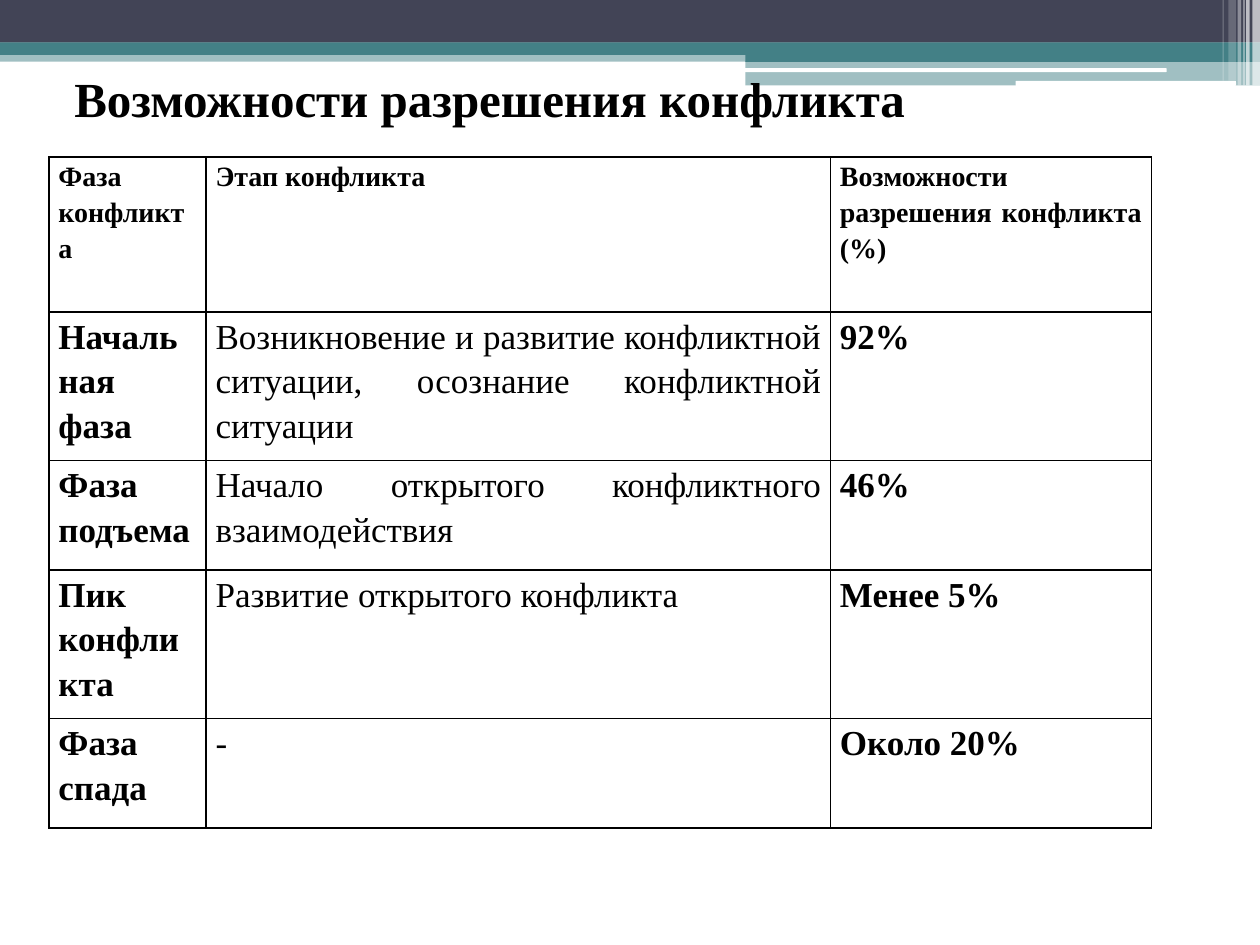
"""Builds a slide with a table of conflict phases and the chances of resolving them."""
from lxml.etree import SubElement
from pptx import Presentation
from pptx.dml.color import RGBColor
from pptx.enum.shapes import MSO_SHAPE
from pptx.enum.text import MSO_ANCHOR, MSO_AUTO_SIZE, PP_ALIGN
from pptx.oxml import parse_xml
from pptx.oxml.ns import nsdecls, qn
from pptx.util import Pt

COLORS = {"navy": "424456", "teal": "438086", "white": "FFFFFF", "black": "000000"}
FONT = "Times New Roman"


def add_band(page, left, top, width, height, color, opacity=100, kind=MSO_SHAPE.RECTANGLE):
    band = page.shapes.add_shape(kind, Pt(left), Pt(top), Pt(width), Pt(height))
    band.shadow.inherit = False
    band.line.fill.background()
    band.fill.solid()
    band.fill.fore_color.rgb = RGBColor.from_string(COLORS[color])
    if opacity < 100:
        tint = band.fill._xPr.find(".//" + qn("a:srgbClr"))
        SubElement(tint, qn("a:alpha"), val=str(opacity * 1000))


def add_text(para, text, size, bold):
    span = para.add_run()
    span.text = text
    span.font.name = FONT
    span.font.size = Pt(size)
    span.font.bold = bold
    span.font.color.rgb = RGBColor.from_string(COLORS["black"])


deck = Presentation()
deck.slide_width, deck.slide_height = Pt(720), Pt(540)
page = deck.slides.add_slide(deck.slide_layouts[5])
page.background.fill.solid()
page.background.fill.fore_color.rgb = RGBColor.from_string(COLORS["white"])

header_bands = [
    (0, 28.8, 720, 6.5, "teal", 50),
    (0, 0, 720, 24.4, "navy", 100),
    (0, 24.2, 720, 7.2, "teal", 100),
    (425.9, 28.2, 294.1, 7.2, "teal", 100),
    (425.9, 34.8, 294.1, 14, "teal", 50),
]
for band in header_bands:
    add_band(page, *band)

for left, top, width, height in [(425.5, 39, 241.2, 2.2), (580.3, 46.2, 126, 2.9)]:
    add_band(page, left, top, width, height, "white", kind=MSO_SHAPE.ROUNDED_RECTANGLE)

stripes = [
    (715.6, 4.4, 48.8, 65),
    (712.1, 2, 48.8, 65),
    (710.5, 0.7, 48.8, 60),
    (707.2, 2, 48.8, 40),
    (702, 4.3, 46.1, 20),
    (698.6, 0.7, 46.1, 30),
]
for left, width, height, opacity in stripes:
    add_band(page, left, 0, width, height, "white", opacity)

rows = [
    ("Фаза конфликта", "Этап конфликта", "Возможности разрешения конфликта (%)"),
    ("Начальная фаза",
     "Возникновение и развитие конфликтной ситуации, осознание конфликтной ситуации", "92%"),
    ("Фаза подъема", "Начало открытого конфликтного взаимодействия", "46%"),
    ("Пик конфликта", "Развитие открытого конфликта", "Менее 5%"),
    ("Фаза спада", "-", "Около 20%"),
]
column_widths = [89.8, 356.8, 183.4]
row_heights = [88.5, 85, 62.4, 85, 62.4]

frame = page.shapes.add_table(
    len(rows), len(column_widths), Pt(28), Pt(89.8),
    Pt(sum(column_widths)), Pt(sum(row_heights)))
table = frame.table
table.first_row = table.horz_banding = False
for column, width in zip(table.columns, column_widths):
    column.width = Pt(width)
for row, height in zip(table.rows, row_heights):
    row.height = Pt(height)

for row_index, texts in enumerate(rows):
    for column_index, text in enumerate(texts):
        cell = table.cell(row_index, column_index)
        cell.margin_left = cell.margin_right = Pt(5.4)
        cell.margin_top = cell.margin_bottom = 0
        cell.vertical_anchor = MSO_ANCHOR.TOP
        cell.fill.background()
        for position, side in enumerate(("lnL", "lnR", "lnT", "lnB")):
            border = parse_xml(
                f'<a:{side} {nsdecls("a")} w="{Pt(1)}"><a:solidFill>'
                f'<a:srgbClr val="{COLORS["black"]}"/></a:solidFill></a:{side}>')
            cell._tc.get_or_add_tcPr().insert(position, border)
        para = cell.text_frame.paragraphs[0]
        para.alignment = PP_ALIGN.JUSTIFY
        para.line_spacing = 1.15
        is_header = row_index == 0
        add_text(para, text, 16 if is_header else 20, is_header or column_index != 1)

title = page.shapes.title
title.left, title.top, title.width, title.height = Pt(0), Pt(33.8), Pt(720), Pt(75)
box = title.text_frame
box.word_wrap = True
box.auto_size = MSO_AUTO_SIZE.NONE
box.vertical_anchor = MSO_ANCHOR.TOP
box.margin_left, box.margin_top = Pt(42.5), Pt(5.4)
box.paragraphs[0].alignment = PP_ALIGN.LEFT
add_text(box.paragraphs[0], "Возможности разрешения конфликта", 28, True)
page.shapes._spTree.append(title._element)

deck.save("out.pptx")
